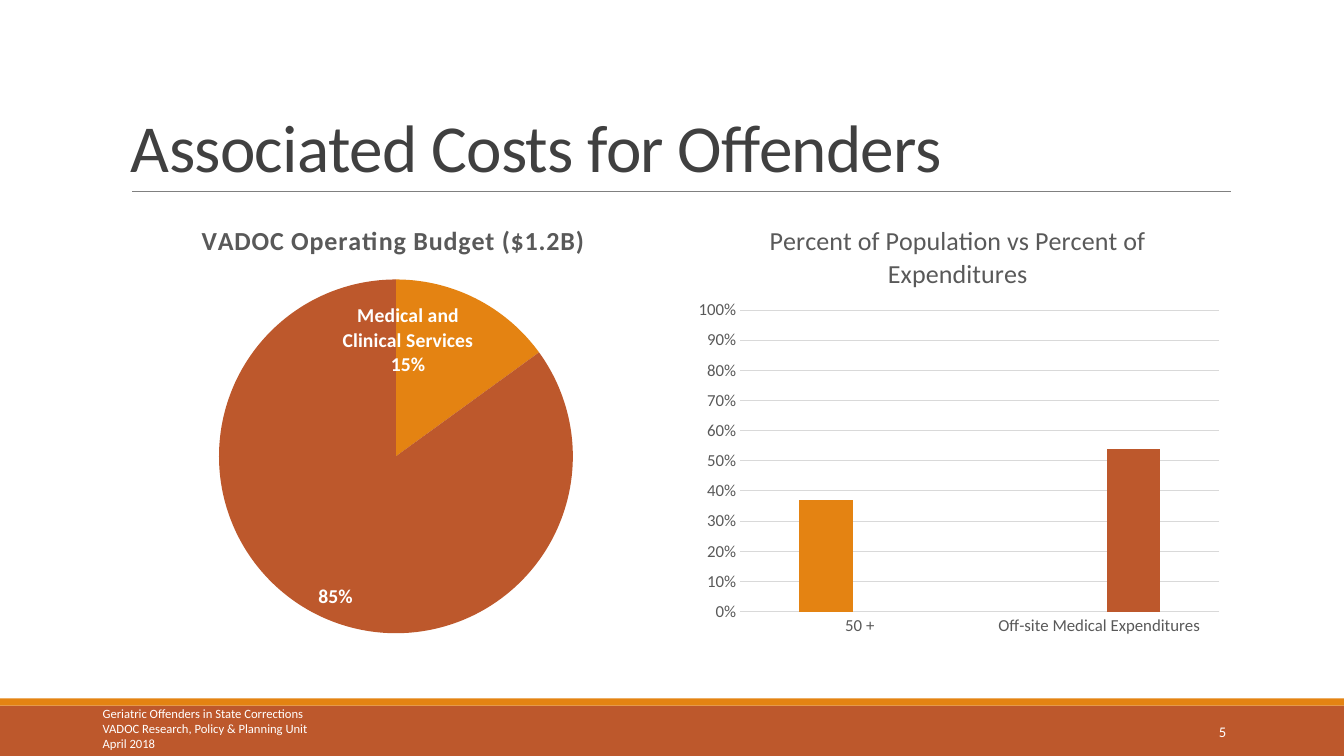
from dataclasses import dataclass

from lxml import etree
from pptx import Presentation
from pptx.chart.data import CategoryChartData
from pptx.dml.color import RGBColor
from pptx.enum.chart import XL_CHART_TYPE, XL_LABEL_POSITION, XL_TICK_MARK
from pptx.enum.shapes import MSO_CONNECTOR, MSO_SHAPE
from pptx.enum.text import MSO_ANCHOR, PP_ALIGN
from pptx.oxml.ns import qn
from pptx.util import Inches, Pt

PIE = XL_CHART_TYPE.PIE
COLUMNS = XL_CHART_TYPE.COLUMN_CLUSTERED
INSIDE_END = XL_LABEL_POSITION.INSIDE_END
NO_TICK = XL_TICK_MARK.NONE
STRAIGHT = MSO_CONNECTOR.STRAIGHT
RECTANGLE = MSO_SHAPE.RECTANGLE
MIDDLE, BOTTOM = MSO_ANCHOR.MIDDLE, MSO_ANCHOR.BOTTOM
LEFT, RIGHT = PP_ALIGN.LEFT, PP_ALIGN.RIGHT


@dataclass(frozen=True)
class Theme:
    """Colours, font and type sizes of the slide."""
    orange: str = "E48312"
    rust: str = "BD582C"
    rule: str = "808080"
    grid: str = "D9D9D9"
    heading: str = "404040"
    chart_text: str = "595959"
    white: str = "FFFFFF"
    font: str = "Calibri"
    title_size: float = 48
    chart_title_size: float = 18.6
    label_size: float = 14
    axis_size: float = 12
    number_size: float = 10.5
    footer_size: float = 9


THEME = Theme()


def rgb(value):
    """Return the colour for a hex string."""
    return RGBColor.from_string(value)


def style_font(font, size, color, bold=False):
    """Apply the theme font with a size, colour and weight."""
    font.name = THEME.font
    font.size = Pt(size)
    font.bold = bold
    font.color.rgb = rgb(color)


def set_spacing(run, points):
    """Set the letter spacing of a run in points."""
    run.font._element.set("spc", str(round(points * 100)))


def add_text(slide, box, lines, size, color, anchor=MIDDLE, align=LEFT):
    """Add a text box holding one paragraph of broken lines."""
    frame = slide.shapes.add_textbox(*map(Inches, box)).text_frame
    frame.word_wrap = True
    frame.vertical_anchor = anchor
    paragraph = frame.paragraphs[0]
    paragraph.alignment = align
    for index, line in enumerate(lines):
        if index:
            paragraph.add_line_break()
        run = paragraph.add_run()
        run.text = line
        style_font(run.font, size, color)
    return paragraph


def add_band(slide, box, color):
    """Add a plain filled band."""
    band = slide.shapes.add_shape(RECTANGLE, *map(Inches, box))
    band.shadow.inherit = False
    band.fill.solid()
    band.fill.fore_color.rgb = rgb(color)
    band.line.fill.background()


def add_heading(slide, box, text):
    """Add the slide title and the rule below it."""
    left, top, width, height = box
    paragraph = add_text(slide, box, [text], THEME.title_size, THEME.heading, BOTTOM)
    paragraph.line_spacing = 0.85
    set_spacing(paragraph.runs[0], -0.5)
    bottom = top + height
    ends = (left + 0.11, bottom, left + width + 0.01, bottom)
    rule = slide.shapes.add_connector(STRAIGHT, *map(Inches, ends))
    rule.line.color.rgb = rgb(THEME.rule)
    rule.line.width = Pt(0.5)
    etree.SubElement(rule._element.spPr, qn("a:effectLst"))


def add_footer(slide, box, lines, number):
    """Add the two footer bands, the source lines and the slide number."""
    left, top, width, height = box
    accent = 0.07
    add_band(slide, (left, top + accent, width, height - accent), THEME.rust)
    add_band(slide, (left, top, width, accent), THEME.orange)
    add_text(slide, (left + 0.92, top + 0.02, 6.1, 0.55), lines,
             THEME.footer_size, THEME.white)
    add_text(slide, (left + 10.83, top + 0.13, 1.43, 0.4), [number],
             THEME.number_size, THEME.white, align=RIGHT)


def add_chart(slide, box, kind, title, categories, series, plot, bold=False, spacing=0):
    """Add a titled chart whose inner plot fills the given fractions."""
    data = CategoryChartData()
    data.categories = categories
    for index, values in enumerate(series, 1):
        data.add_series(f"Series {index}", values)
    chart = slide.shapes.add_chart(kind, *map(Inches, box), data).chart
    chart.has_legend = False
    style_font(chart.font, THEME.axis_size, THEME.chart_text)
    chart.has_title = True
    run = chart.chart_title.text_frame.paragraphs[0].add_run()
    run.text = title
    style_font(run.font, THEME.chart_title_size, THEME.chart_text, bold)
    set_spacing(run, spacing)
    area = chart._chartSpace.chart.plotArea
    for old in area.findall(qn("c:layout")):
        area.remove(old)
    layout = etree.Element(qn("c:layout"))
    area.insert(0, layout)
    manual = etree.SubElement(layout, qn("c:manualLayout"))
    settings = [("layoutTarget", "inner"), ("xMode", "edge"), ("yMode", "edge")]
    for name, value in settings + list(zip("xywh", plot)):
        etree.SubElement(manual, qn(f"c:{name}")).set("val", str(value))
    return chart


def add_budget_pie(slide, box):
    """Add the pie of the operating budget."""
    chart = add_chart(slide, box, PIE, "VADOC Operating Budget ($1.2B)",
                      ["Medical and Clinical Services", ""], [(15, 85)],
                      (0.18, 0.17, 0.65, 0.8), bold=True, spacing=0.5)
    pie = chart.plots[0]
    for index, color in enumerate((THEME.orange, THEME.rust)):
        fill = pie.series[0].points[index].format.fill
        fill.solid()
        fill.fore_color.rgb = rgb(color)
    labels = pie.series[0].data_labels
    labels.show_value = False
    labels.show_category_name = True
    labels.show_percentage = True
    labels.position = INSIDE_END
    style_font(labels.font, THEME.label_size, THEME.white, bold=True)
    separator = etree.Element(qn("c:separator"))
    separator.text = "\n"
    labels._element.find(qn("c:showBubbleSize")).addnext(separator)


def add_expenditure_columns(slide, box):
    """Add the columns comparing population with expenditures."""
    chart = add_chart(slide, box, COLUMNS,
                      "Percent of Population vs Percent of Expenditures",
                      ["50 +", "Off-site Medical Expenditures"],
                      [(0.37, None), (None, 0.54)], (0.1, 0.24, 0.88, 0.68))
    columns = chart.plots[0]
    columns.gap_width = 219
    columns.overlap = -27
    for series, color in zip(columns.series, (THEME.orange, THEME.rust)):
        series.format.fill.solid()
        series.format.fill.fore_color.rgb = rgb(color)
    values, categories = chart.value_axis, chart.category_axis
    for axis in (values, categories):
        axis.major_tick_mark = axis.minor_tick_mark = NO_TICK
        style_font(axis.tick_labels.font, THEME.axis_size, THEME.chart_text)
    values.minimum_scale, values.maximum_scale, values.major_unit = 0, 1, 0.1
    values.tick_labels.number_format = "0%"
    values.tick_labels.number_format_is_linked = False
    values.format.line.fill.background()
    for line in (values.major_gridlines.format.line, categories.format.line):
        line.color.rgb = rgb(THEME.grid)
        line.width = Pt(0.75)


def main():
    """Build the slide and save it."""
    presentation = Presentation()
    presentation.slide_width = Inches(13.33)
    presentation.slide_height = Inches(7.5)
    slide = presentation.slides.add_slide(presentation.slide_layouts[6])
    add_heading(slide, (1.2, 0.31, 11, 1.59), "Associated Costs for Offenders")
    add_budget_pie(slide, (1.2, 2.02, 5.4, 4.4))
    add_expenditure_columns(slide, (6.8, 2.02, 5.4, 4.4))
    add_footer(slide, (0, 6.93, 13.33, 0.57),
               ["Geriatric Offenders in State Corrections",
                "VADOC Research, Policy & Planning Unit", "April 2018"], "5")
    presentation.save("out.pptx")


if __name__ == "__main__":
    main()
